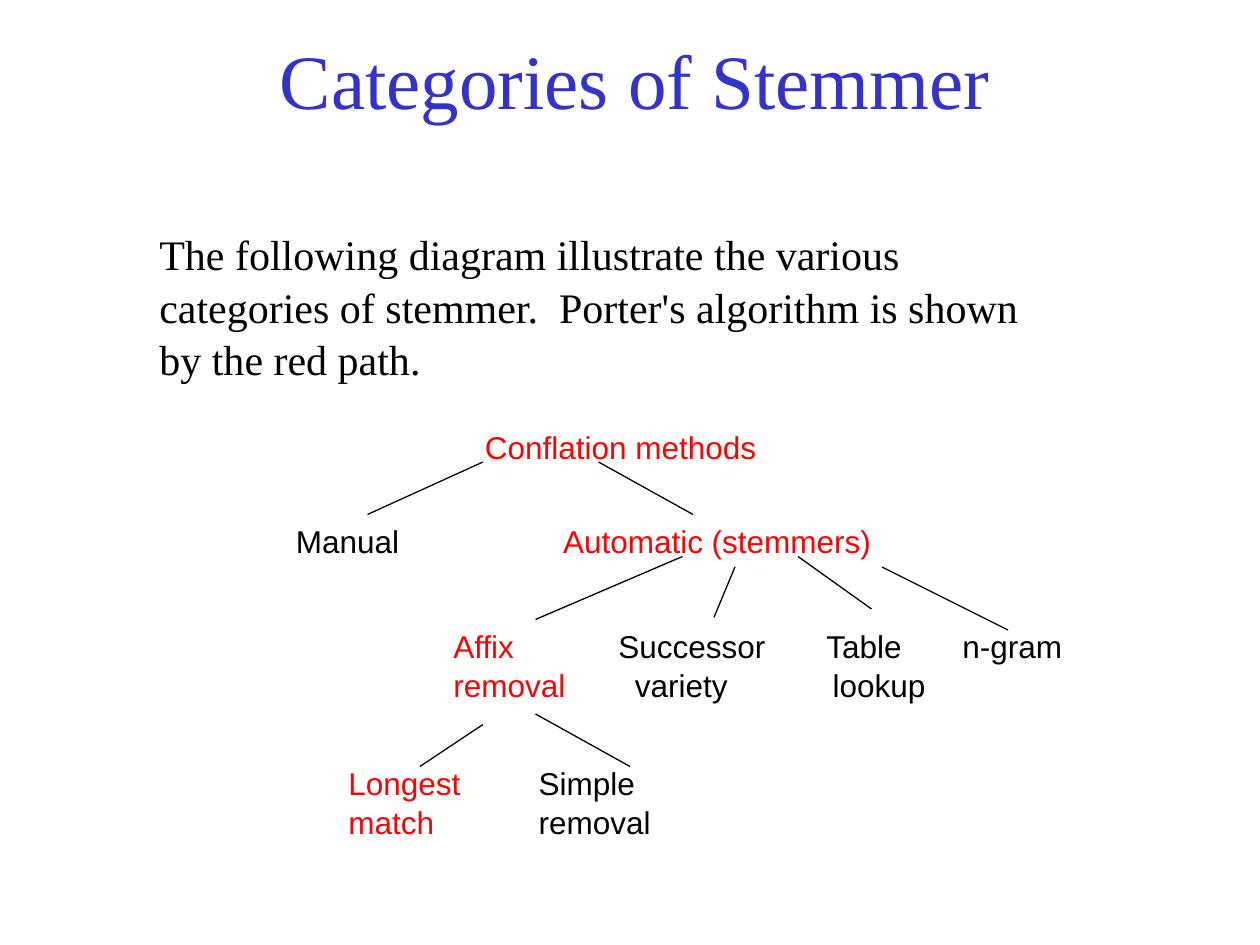
from lxml import etree
from pptx import Presentation
from pptx import util as u
from pptx.dml.color import RGBColor
from pptx.enum import shapes, text
from pptx.oxml.ns import qn

BLUE, RED, BLACK = "3333CC", "FF0000", "000000"
SERIF, SANS = "Times New Roman", "Arial"


def cell(n):
    """Length of n grid cells, twelve to the inch."""
    return u.Inches(n / 12)


def add_text(left, top, width, height, rows, size, font):
    """Add a text box; each row is a list of (words, colour, tab in inches)."""
    box = slide.shapes.add_textbox(cell(left), cell(top), cell(width), cell(height))
    frame = box.text_frame
    frame.word_wrap = True
    for i, row in enumerate(rows):
        para = frame.paragraphs[0] if i == 0 else frame.add_paragraph()
        para.line_spacing = 1.04
        stops = [tab for _, _, tab in row if tab]
        if stops:
            tabs = etree.SubElement(para._p.get_or_add_pPr(), qn("a:tabLst"))
            for stop in stops:
                etree.SubElement(tabs, qn("a:tab"), pos=str(u.Inches(stop)), algn="l")
        for words, hue, tab in row:
            run = para.add_run()
            run.text = "\t" + words if tab else words
            run.font.size = u.Pt(size)
            run.font.name = font
            run.font.color.rgb = RGBColor.from_string(hue)
    return frame


deck = Presentation()
deck.slide_width, deck.slide_height = u.Inches(10), u.Inches(7.5)
slide = deck.slides.add_slide(deck.slide_layouts[6])

title = add_text(6, 0, 109, 15, [[("Categories of Stemmer", BLUE, 0)]], 44, SERIF)
title.vertical_anchor = text.MSO_ANCHOR.MIDDLE
title.paragraphs[0].alignment = text.PP_ALIGN.CENTER
title.paragraphs[0].line_spacing = 1.0

intro = ("The following diagram illustrate the various categories of stemmer.  "
         "Porter's algorithm is shown by the red path.")
add_text(14, 21, 89, 15.6, [[(intro, BLACK, 0)]], 24, SERIF)

# Tree levels: left, top, width, height in cells, then rows of words
levels = [
    (45, 40, 28.3, 4.8, [[("Conflation methods", RED, 0)]]),
    (27, 49, 57.5, 4.8, [[("Manual", BLACK, 0), ("Automatic (stemmers)", RED, 2.12)]]),
    (42, 59, 61, 8.4, [
        [("Affix", RED, 0), ("Successor", BLACK, 1.31),
         ("Table", BLACK, 2.96), ("n-gram", BLACK, 4.04)],
        [("removal", RED, 0), ("variety", BLACK, 1.44), ("lookup", BLACK, 3.01)]]),
    (32, 72, 38, 8.4, [
        [("Longest", RED, 0), ("Simple", BLACK, 1.51)],
        [("match", RED, 0), ("removal", BLACK, 1.51)]]),
]
for left, top, width, height, rows in levels:
    add_text(left, top, width, height, rows, 18, SANS).margin_right = 0

# Branches: start and end in cells
branches = [
    (46, 44, 35, 49), (57, 44, 66, 49),
    (65, 53, 51, 59), (70, 54, 68, 58.8), (76, 53, 83, 58), (84, 54, 96, 60),
    (46, 69, 40, 73), (51, 68, 60, 73),
]
for ends in branches:
    branch = slide.shapes.add_connector(shapes.MSO_CONNECTOR.STRAIGHT, *map(cell, ends))
    branch.line.color.rgb = RGBColor.from_string(BLACK)
    branch.line.width = u.Pt(0.75)
    etree.SubElement(branch._element.spPr, qn("a:effectLst"))

deck.save("out.pptx")
